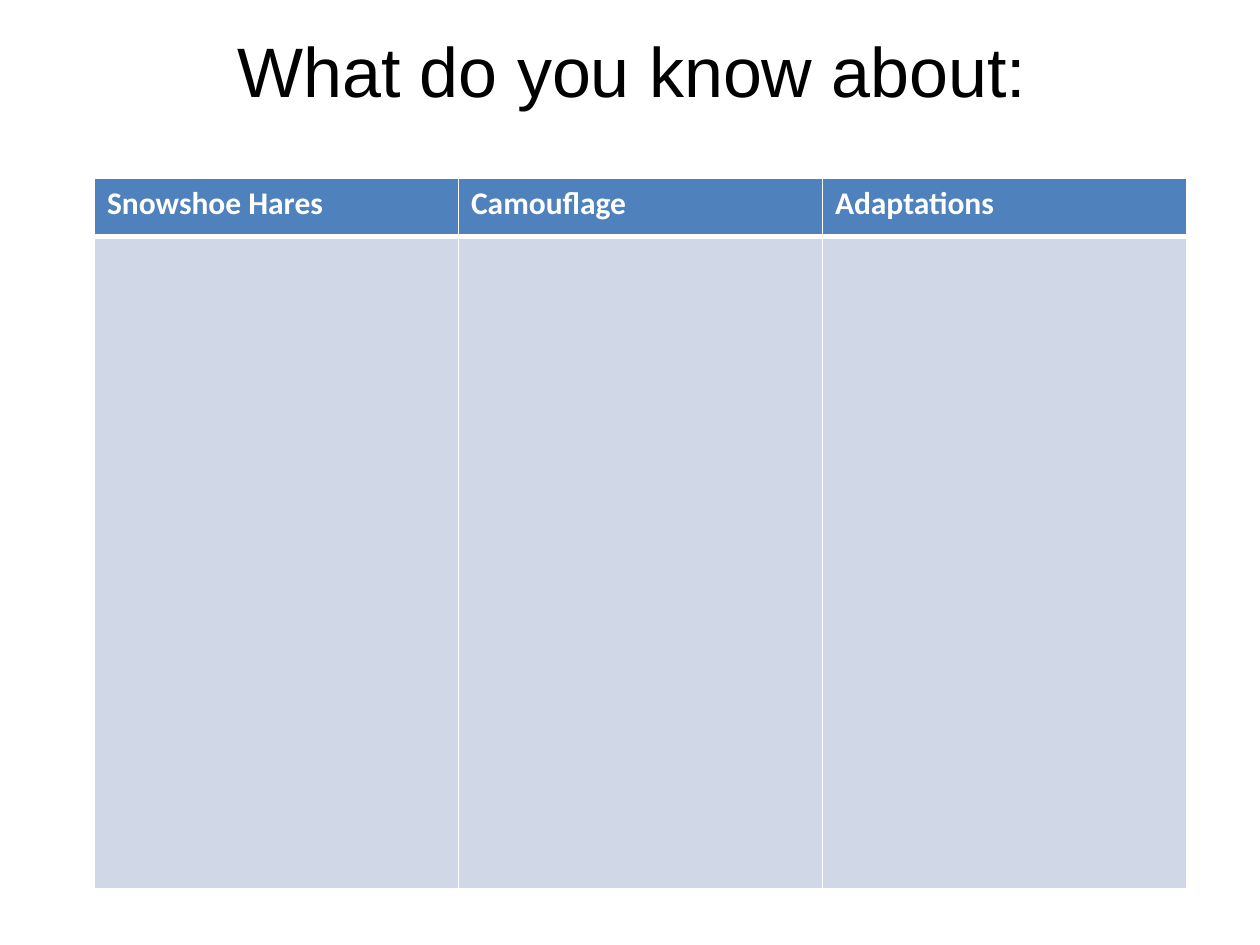
from lxml import etree
from pptx import Presentation
from pptx.dml.color import RGBColor
from pptx.enum.text import MSO_ANCHOR, MSO_AUTO_SIZE, PP_ALIGN
from pptx.oxml.ns import qn
from pptx.util import Pt

WHITE = RGBColor(0xFF, 0xFF, 0xFF)
BLACK = RGBColor(0x00, 0x00, 0x00)
BLUE = RGBColor(0x4F, 0x81, 0xBD)
PALE_BLUE = RGBColor(0xD0, 0xD8, 0xE8)

TOPICS = ["Snowshoe Hares", "Camouflage", "Adaptations"]
HEADER_HEIGHT = 33


def style_run(r, font, size, color, bold=False):
    r.font.name = font
    r.font.size = Pt(size)
    r.font.color.rgb = color
    r.font.bold = bold


def set_borders(cell, color, bottom):
    """Draw 1 pt borders, with a bottom border of the given width."""
    tc_pr = cell._tc.get_or_add_tcPr()
    widths = {"lnL": 1, "lnR": 1, "lnT": 1, "lnB": bottom}
    # Borders have to come before the fill
    for i, (side, width) in enumerate(widths.items()):
        ln = etree.Element(qn(f"a:{side}"), w=str(Pt(width)))
        fill = etree.SubElement(ln, qn("a:solidFill"))
        etree.SubElement(fill, qn("a:srgbClr"), val=str(color))
        tc_pr.insert(i, ln)


def add_title(s, text, left, top, width, height):
    sp = s.shapes.title
    sp.left, sp.top, sp.width, sp.height = map(Pt, (left, top, width, height))
    sp.fill.solid()
    sp.fill.fore_color.rgb = WHITE
    tf = sp.text_frame
    tf.text = text
    tf.word_wrap = False
    tf.auto_size = MSO_AUTO_SIZE.SHAPE_TO_FIT_TEXT
    tf.vertical_anchor = MSO_ANCHOR.TOP
    p = tf.paragraphs[0]
    p.alignment = PP_ALIGN.CENTER
    style_run(p.runs[0], "Arial", 40, BLACK)


def add_topic_table(s, topics, left, top, width, height):
    box = map(Pt, (left, top, width, height))
    table = s.shapes.add_table(2, len(topics), *box).table
    table.rows[0].height = Pt(HEADER_HEIGHT)
    table.rows[1].height = Pt(height - HEADER_HEIGHT)

    for col, topic in enumerate(topics):
        table.columns[col].width = Pt(width / len(topics))
        header, answer = table.cell(0, col), table.cell(1, col)
        for cell, color, bottom in ((header, BLUE, 3), (answer, PALE_BLUE, 1)):
            cell.fill.solid()
            cell.fill.fore_color.rgb = color
            set_borders(cell, WHITE, bottom)
        header.text_frame.text = topic
        r = header.text_frame.paragraphs[0].runs[0]
        style_run(r, "Calibri", 18, WHITE, bold=True)


def main():
    prs = Presentation()
    prs.slide_width, prs.slide_height = Pt(720), Pt(540)
    s = prs.slides.add_slide(prs.slide_layouts[5])  # title only
    add_title(s, "What do you know about:", 126, 12, 470, 55.75)
    add_topic_table(s, TOPICS, 54, 102, 624, 406)
    prs.save("out.pptx")


if __name__ == "__main__":
    main()
